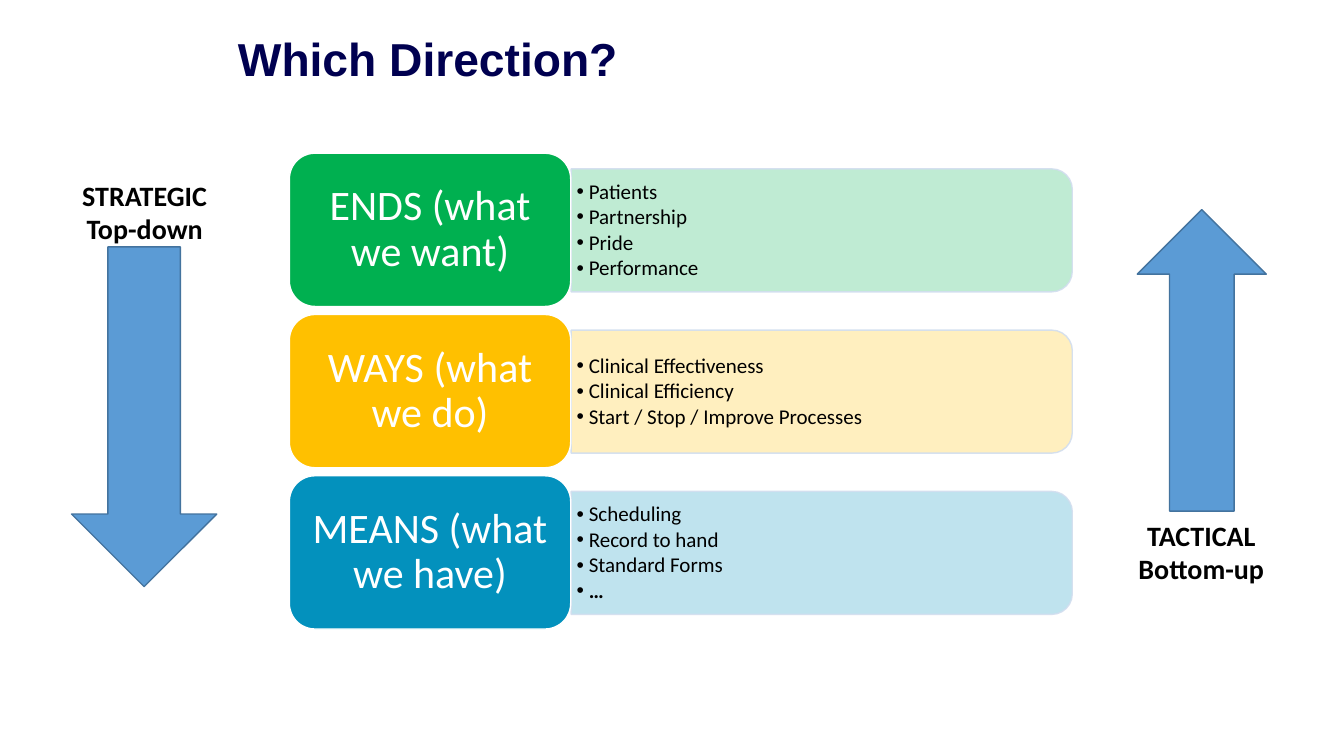
from lxml import etree
from pptx import Presentation
from pptx import util as u
from pptx.dml.color import RGBColor
from pptx.enum import shapes, text
from pptx.oxml import ns

NAVY = RGBColor(0x00, 0x00, 0x50)
BLACK = RGBColor(0x00, 0x00, 0x00)
WHITE = RGBColor(0xFF, 0xFF, 0xFF)
GREEN = RGBColor(0x00, 0xB0, 0x50)
AMBER = RGBColor(0xFF, 0xC0, 0x00)
TEAL = RGBColor(0x03, 0x91, 0xBD)
BLUE = RGBColor(0x5B, 0x9B, 0xD5)
BLUE_EDGE = RGBColor(0x43, 0x73, 0x9E)
PALE_EDGE = RGBColor(0xD2, 0xDE, 0xEF)

SHAPE = shapes.MSO_SHAPE
ALIGN = text.PP_ALIGN
MIDDLE = text.MSO_ANCHOR.MIDDLE
TOP = text.MSO_ANCHOR.TOP

ROW_TOP, ROW_PITCH = 152, 160
ROWS = [
    ("ENDS (what we want)", GREEN, ["Patients", "Partnership", "Pride", "Performance"]),
    ("WAYS (what we do)", AMBER,
     ["Clinical Effectiveness", "Clinical Efficiency", "Start / Stop / Improve Processes"]),
    ("MEANS (what we have)", TEAL, ["Scheduling", "Record to hand", "Standard Forms", "…"]),
]


class Deck:
    """Holds the style and the current slide, with one method per kind of element."""

    PX = 9144
    TITLE = {"name": "Arial", "size": u.Pt(33), "bold": True}
    LABEL = {"name": "Calibri", "size": u.Pt(30), "bold": False}
    ITEM = {"name": "Calibri", "size": u.Pt(15), "bold": False}
    CAPTION = {"name": "Calibri", "size": u.Pt(20), "bold": True}

    def __init__(self, width, height, layout):
        self.prs = Presentation()
        self.prs.slide_width = width * self.PX
        self.prs.slide_height = height * self.PX
        self.s = self.prs.slides.add_slide(self.prs.slide_layouts[layout])
        self.bodies = [p for p in self.s.placeholders if p.placeholder_format.idx in range(1, 5)]

    def apply(self, target, formats):
        for name, value in formats.items():
            setattr(target, name, value)

    def place(self, sp, box):
        self.apply(sp, dict(zip(("left", "top", "width", "height"), (n * self.PX for n in box))))

    def fill_text(self, sp, lines, font, color, align=ALIGN.CENTER, anchor=MIDDLE,
                  margins=(10, 5), spacing=0.9, after=0, bullet=False):
        tf = sp.text_frame
        side, edge = (n * self.PX for n in margins)
        self.apply(tf, {"word_wrap": True, "auto_size": text.MSO_AUTO_SIZE.NONE,
                        "vertical_anchor": anchor, "margin_left": side, "margin_right": side,
                        "margin_top": edge, "margin_bottom": edge})
        for i, line in enumerate(lines):
            p = tf.add_paragraph() if i else tf.paragraphs[0]
            if bullet:
                self.bullet(p)
            self.apply(p, {"alignment": align, "line_spacing": spacing,
                           "space_before": u.Pt(0), "space_after": u.Pt(after)})
            r = p.add_run()
            r.text = line
            self.apply(r.font, font)
            r.font.color.rgb = color
            if line == "…":
                r.font.bold = True

    def bullet(self, p):
        pPr = p._p.get_or_add_pPr()
        pPr.set("marL", str(12 * self.PX))
        pPr.set("indent", str(-12 * self.PX))
        etree.SubElement(pPr, ns.qn("a:buFont")).set("typeface", "Arial")
        etree.SubElement(pPr, ns.qn("a:buChar")).set("char", "•")

    def title(self, line, box):
        sp = self.s.shapes.title
        self.place(sp, box)
        self.fill_text(sp, [line], self.TITLE, NAVY, ALIGN.LEFT)

    def items(self, lines, box):
        sp = self.bodies.pop(0)
        self.place(sp, box)
        self.s.shapes._spTree.append(sp._element)
        self.fill_text(sp, lines, self.ITEM, BLACK, ALIGN.LEFT,
                       margins=(6, 3), after=2, bullet=True)

    def shape(self, kind, box, fill, line, rotation=0):
        sp = self.s.shapes.add_shape(kind, *(n * self.PX for n in box))
        sp.shadow.inherit = False
        sp.rotation = rotation
        sp.fill.solid()
        sp.fill.fore_color.rgb = fill
        sp.line.color.rgb = line
        sp.line.width = u.Pt(1)
        return sp

    def bar(self, box, fill):
        sp = self.shape(SHAPE.ROUND_2_SAME_RECTANGLE, box, fill, PALE_EDGE, 90)
        colors = sp._element.spPr.iter(ns.qn("a:srgbClr"))
        for color, alpha in zip(colors, (25000, 90000)):
            etree.SubElement(color, ns.qn("a:alpha")).set("val", str(alpha))

    def label(self, line, box, fill):
        sp = self.shape(SHAPE.ROUNDED_RECTANGLE, box, fill, WHITE)
        self.fill_text(sp, [line], self.LABEL, WHITE, margins=(12, 6))

    def caption(self, lines, box):
        sp = self.s.shapes.add_textbox(*(n * self.PX for n in box))
        self.fill_text(sp, lines, self.CAPTION, BLACK, anchor=TOP, spacing=1.0)

    def save(self):
        for sp in self.bodies:
            sp._element.getparent().remove(sp._element)
        self.prs.save("out.pptx")


def main():
    deck = Deck(1333, 750, layout=4)
    deck.title("Which Direction?", (226, 21, 949, 81))
    for i, (label, color, items) in enumerate(ROWS):
        top = ROW_TOP + i * ROW_PITCH
        deck.bar((754, top - 172, 122, 497), color)
        deck.items(items, (566, top + 22, 491, 110))
        deck.label(label, (287, top, 279, 152), color)
    deck.caption(["STRATEGIC", "Top-down"], (22, 172, 243, 77))
    deck.caption(["TACTICAL", "Bottom-up"], (1070, 509, 243, 77))
    deck.shape(SHAPE.DOWN_ARROW, (71, 245, 144, 337), BLUE, BLUE_EDGE)
    deck.shape(SHAPE.UP_ARROW, (1128, 208, 128, 299), BLUE, BLUE_EDGE)
    deck.save()


if __name__ == "__main__":
    main()
